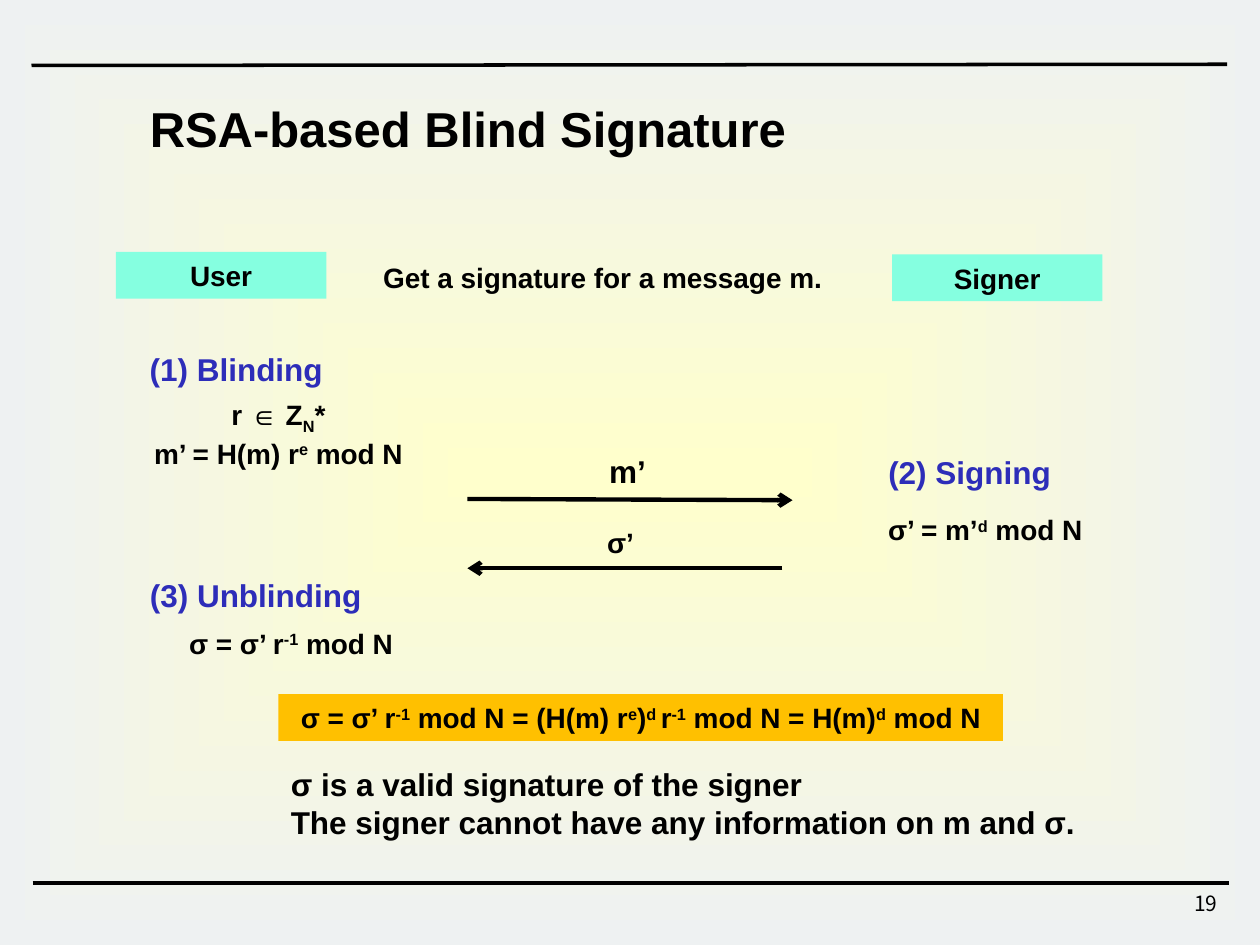
from lxml import etree
from pptx import Presentation
from pptx.dml.color import RGBColor
from pptx.enum.shapes import MSO_CONNECTOR, MSO_SHAPE
from pptx.enum.text import MSO_ANCHOR, MSO_AUTO_SIZE, PP_ALIGN
from pptx.oxml import parse_xml
from pptx.oxml.ns import nsdecls, qn
from pptx.util import Inches, Pt

RECTANGLE = MSO_SHAPE.RECTANGLE
STRAIGHT = MSO_CONNECTOR.STRAIGHT
GROW = MSO_AUTO_SIZE.SHAPE_TO_FIT_TEXT
MIDDLE = MSO_ANCHOR.MIDDLE
LEFT, CENTER, RIGHT = PP_ALIGN.LEFT, PP_ALIGN.CENTER, PP_ALIGN.RIGHT

COLUMNS, ROWS = 100, 75
CELL = Inches(0.1)
COLORS = {
    "ink": "000000",
    "step": "2D2DB9",
    "party": "85FFE0",
    "result": "FFC000",
    "glow": "FFFFCC",
    "edge": "EEF1F2",
}
SUPER, SUB = 30000, -25000
INVERSE = ("-1", SUPER)
MOD_N = " mod N"


class ProtocolSlide:
    """Places elements on one slide; every box is (column, row, columns, rows)."""

    font = "Arial"

    def __init__(self, deck):
        self.slide = deck.slides.add_slide(deck.slide_layouts[6])
        self.shapes = self.slide.shapes

    @staticmethod
    def cells(numbers):
        return [round(number * CELL) for number in numbers]

    @staticmethod
    def color(name):
        return RGBColor.from_string(COLORS[name])

    def rectangle(self, box):
        shape = self.shapes.add_shape(RECTANGLE, *self.cells(box))
        shape.shadow.inherit = False
        shape.line.fill.background()
        return shape

    def backdrop(self):
        """Fill the slide with a gradient that spreads from its centre."""
        shape = self.rectangle((0, 0, COLUMNS, ROWS))
        shape.fill.background()
        no_fill = shape.element.spPr.find(qn("a:noFill"))
        stops = "".join(
            f'<a:gs pos="{position}"><a:srgbClr val="{COLORS[name]}"/></a:gs>'
            for position, name in ((0, "glow"), (100000, "edge"))
        )
        gradient = parse_xml(
            f'<a:gradFill {nsdecls("a")} rotWithShape="1"><a:gsLst>{stops}</a:gsLst>'
            '<a:path path="shape"><a:fillToRect l="50000" t="50000" r="50000" b="50000"/>'
            "</a:path></a:gradFill>"
        )
        shape.element.spPr.replace(no_fill, gradient)

    def line(self, start, end, width=2, arrow=False):
        line = self.shapes.add_connector(STRAIGHT, *self.cells(start + end))
        line.line.color.rgb = self.color("ink")
        line.line.width = Pt(width)
        if arrow:
            outline = line.element.spPr.find(qn("a:ln"))
            etree.SubElement(outline, qn("a:tailEnd"), type="arrow")
        etree.SubElement(line.element.spPr, qn("a:effectLst"))

    def add_runs(self, frame, paragraphs, size=16, color="ink", align=CENTER,
                 wrap=True, bold=True, font=None):
        """Fill a frame; each run is a string or a (string, baseline) pair."""
        frame.word_wrap = wrap
        frame.auto_size = GROW
        for index, runs in enumerate(paragraphs):
            paragraph = frame.paragraphs[0] if index == 0 else frame.add_paragraph()
            paragraph.alignment = align
            for part in runs:
                words, baseline = (part, 0) if isinstance(part, str) else part
                run = paragraph.add_run()
                run.text = words
                run.font.name = font or self.font
                run.font.size = Pt(size)
                run.font.bold = bold
                run.font.color.rgb = self.color(color)
                if baseline:
                    run._r.get_or_add_rPr().set("baseline", str(baseline))

    def text(self, box, *paragraphs, **style):
        holder = self.shapes.add_textbox(*self.cells(box))
        self.add_runs(holder.text_frame, paragraphs, **style)

    def panel(self, box, fill, runs):
        shape = self.rectangle(box)
        shape.fill.solid()
        shape.fill.fore_color.rgb = self.color(fill)
        shape.text_frame.vertical_anchor = MIDDLE
        self.add_runs(shape.text_frame, [runs])

    def step(self, box, heading):
        self.text(box, [heading], size=18, color="step", wrap=False)


def main():
    deck = Presentation()
    deck.slide_width, deck.slide_height = COLUMNS * CELL, ROWS * CELL
    page = ProtocolSlide(deck)

    page.backdrop()
    page.line((2.5, 5.2), (97.4, 5.1))
    page.line((2.6, 70.1), (97.5, 70.1))
    page.text((76.8, 70.2, 20.8, 3.3), ["19"], size=12, align=RIGHT,
              bold=False, font="Noto Sans CJK KR")
    page.text((10.9, 7.3, 53.1, 5.7), ["RSA-based Blind Signature"],
              size=28, align=LEFT, wrap=False)

    page.panel((9.2, 20, 16.7, 3.7), "party", ["User"])
    page.panel((70.8, 20.2, 16.7, 3.7), "party", ["Signer"])
    page.text((27.3, 20.2, 41.7, 3.7), ["Get a signature for a message m. "])

    page.step((10.8, 27.3, 15.9, 4), "(1) Blinding")
    page.text((9.8, 31.1, 24.6, 6.4),
              ["r ∈ Z", ("N", SUB), "*"],
              ["m’ = H(m) r", ("e", SUPER), MOD_N])

    page.step((69.4, 35.5, 15.1, 4), "(2) Signing")
    page.text((63.5, 40.2, 29.4, 3.7), ["σ’ = m’", ("d", SUPER), MOD_N])

    unblinding = ["σ = σ’ r", INVERSE, MOD_N]
    page.step((10.8, 45.2, 19, 4), "(3) Unblinding")
    page.text((11.5, 49.2, 23.2, 3.7), unblinding)

    page.line((37.1, 39.6), (62.9, 39.7), width=2.5, arrow=True)
    page.text((47.3, 35.4, 5, 4), ["m’"], size=18, wrap=False)
    page.line((62.1, 45.1), (37.1, 45.1), width=2.5, arrow=True)
    page.text((43.8, 41.2, 10.9, 3.7), ["σ’"])

    page.panel((22.1, 55.1, 57.5, 3.7), "result", unblinding + [
        " = (H(m) r", ("e", SUPER), ")", ("d ", SUPER), "r", INVERSE,
        MOD_N, " = H(m)", ("d", SUPER), MOD_N])
    page.text((22.1, 60.2, 66.4, 7.1),
              ["σ is a valid signature of the signer"],
              ["The signer cannot have any information on m and σ."],
              size=18, align=LEFT, wrap=False)

    deck.save("out.pptx")


if __name__ == "__main__":
    main()
